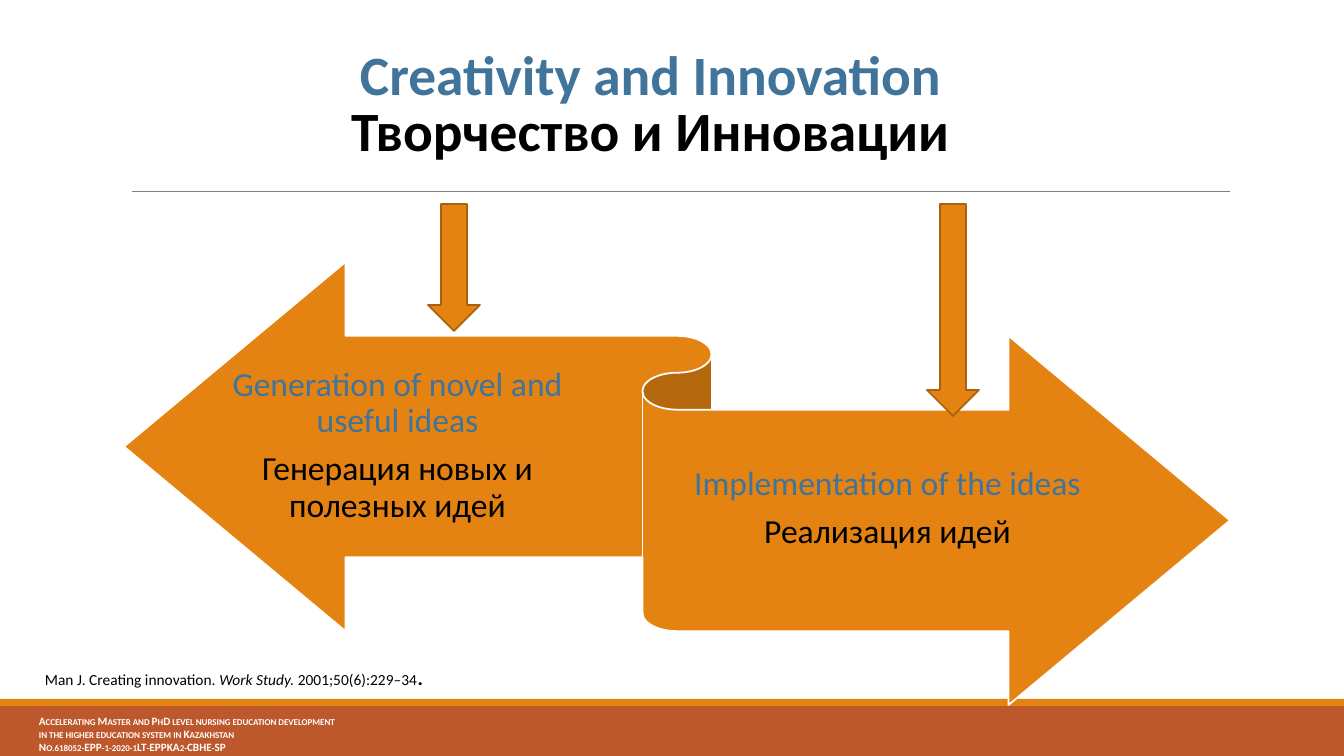
"""Build the Creativity and Innovation slide."""
from dataclasses import dataclass

from lxml import etree
from pptx import Presentation
from pptx import util as u
from pptx.dml.color import RGBColor
from pptx.enum import shapes, text
from pptx.oxml.ns import qn

EMU_PER_PX = 914400 / 100.8
ORANGE = RGBColor(0xE4, 0x83, 0x12)
DARK_ORANGE = RGBColor(0xA9, 0x61, 0x0D)
RUST = RGBColor(0xBD, 0x58, 0x2C)
GREY = RGBColor(0x80, 0x80, 0x80)
BLUE = RGBColor(0x40, 0x74, 0x9B)
BLACK = RGBColor(0, 0, 0)
WHITE = RGBColor(0xFF, 0xFF, 0xFF)
FONT = "Calibri"


@dataclass
class Box:
    left: int
    top: int
    width: int
    height: int

    def emu(self) -> list[u.Emu]:
        return [px(n) for n in (self.left, self.top, self.width, self.height)]


@dataclass
class Block:
    box: Box
    kind: shapes.MSO_SHAPE
    fill: RGBColor
    outline: RGBColor | None = None


@dataclass
class Idea:
    box: Box
    english: str
    russian: str


BANDS = [
    Block(Box(0, 706, 1344, 50), shapes.MSO_SHAPE.RECTANGLE, RUST),
    Block(Box(0, 699, 1344, 7), shapes.MSO_SHAPE.RECTANGLE, ORANGE),
]
RIBBON = Block(Box(124, 262, 1106, 443), shapes.MSO_SHAPE.LEFT_RIGHT_RIBBON, ORANGE, WHITE)
DOWN_ARROWS = [
    Block(Box(left, 204, 52, height), shapes.MSO_SHAPE.DOWN_ARROW, ORANGE, DARK_ORANGE)
    for left, height in ((428, 127), (927, 212))
]
IDEAS = [
    Idea(Box(210, 338, 375, 217), "Generation of novel and useful ideas",
         "Генерация новых и полезных идей"),
    Idea(Box(672, 401, 431, 217), "Implementation of the ideas", "Реализация идей"),
]
PROJECT = [
    "Accelerating Master and PhD level nursing education development",
    "in the higher education system in Kazakhstan",
    "No.618052-EPP-1-2020-1LT-EPPKA2-CBHE-SP",
]
CITATION = [
    ("Man J. Creating innovation. ", 11, False),
    ("Work Study. ", 11, True),
    ("2001;50(6):229–34", 11, False),
    (".", 18, False),
]


def px(length: int) -> u.Emu:
    """Turn px into EMU."""
    return u.Emu(round(length * EMU_PER_PX))


def add_block(slide, block: Block) -> None:
    """Draw a filled preset shape."""
    shape = slide.shapes.add_shape(block.kind, *block.box.emu())
    shape.shadow.inherit = False
    shape.fill.solid()
    shape.fill.fore_color.rgb = block.fill
    if block.outline is None:
        shape.line.fill.background()
    else:
        shape.line.color.rgb = block.outline
        shape.line.width = u.Pt(1.25)


def add_frame(slide, box: Box, anchor=text.MSO_ANCHOR.TOP, wrap: bool = True):
    """Add a text box and return its text frame."""
    frame = slide.shapes.add_textbox(*box.emu()).text_frame
    frame.word_wrap = wrap
    frame.vertical_anchor = anchor
    return frame


def add_paragraph(frame, wording: str, size: float, color: RGBColor, bold: bool = False):
    """Write the next paragraph of a frame."""
    first = frame.paragraphs[0]
    paragraph = frame.add_paragraph() if first.runs else first
    paragraph.text = wording
    font = paragraph.font
    font.name, font.size, font.bold = FONT, u.Pt(size), bold
    font.color.rgb = color
    return paragraph


def add_rule(slide) -> None:
    """Draw the thin line under the title."""
    rule = slide.shapes.add_connector(
        shapes.MSO_CONNECTOR.STRAIGHT, px(132), px(191), px(1230), px(191))
    rule.line.color.rgb = GREY
    rule.line.width = u.Pt(0.5)
    etree.SubElement(rule._element.spPr, qn("a:effectLst"))


def add_project(slide) -> None:
    """Write the project name in small capitals on the bottom band."""
    frame = add_frame(slide, Box(29, 709, 463, 47))
    frame.margin_bottom = 0
    for wording in PROJECT:
        paragraph = add_paragraph(frame, wording, 8, WHITE, bold=True)
        paragraph._p.pPr.find(qn("a:defRPr")).set("cap", "small")


def add_title(slide) -> None:
    """Write the two-language title."""
    frame = add_frame(slide, Box(29, 51, 1243, 117), text.MSO_ANCHOR.BOTTOM)
    title = add_paragraph(
        frame, "Creativity and Innovation\vТворчество и Инновации", 39.6, BLACK, bold=True)
    title.alignment = text.PP_ALIGN.CENTER
    title.line_spacing = 0.85
    title.runs[0].font.color.rgb = BLUE


def add_idea(slide, idea: Idea) -> None:
    """Write one side of the ribbon in both languages."""
    frame = add_frame(slide, idea.box, text.MSO_ANCHOR.MIDDLE)
    frame.margin_left = frame.margin_right = 0
    frame.margin_top, frame.margin_bottom = px(9), px(10)
    for wording, color in ((idea.english, BLUE), (idea.russian, BLACK)):
        paragraph = add_paragraph(frame, wording, 24, color)
        paragraph.alignment = text.PP_ALIGN.CENTER
        paragraph.line_spacing = 0.9
        paragraph.space_after = u.Pt(8.4)


def add_citation(slide) -> None:
    """Write the reference above the bottom band."""
    frame = add_frame(slide, Box(35, 655, 404, 40), wrap=False)
    paragraph = frame.paragraphs[0]
    paragraph.font.name = FONT
    paragraph.font.color.rgb = BLACK
    for wording, size, italic in CITATION:
        run = paragraph.add_run()
        run.text = wording
        run.font.size, run.font.italic = u.Pt(size), italic


def main() -> None:
    """Build and save the slide."""
    deck = Presentation()
    deck.slide_width, deck.slide_height = px(1344), px(756)
    slide = deck.slides.add_slide(deck.slide_layouts[6])
    for band in BANDS:
        add_block(slide, band)
    add_rule(slide)
    add_project(slide)
    add_title(slide)
    add_block(slide, RIBBON)
    for idea in IDEAS:
        add_idea(slide, idea)
    for arrow in DOWN_ARROWS:
        add_block(slide, arrow)
    add_citation(slide)
    deck.save("out.pptx")


if __name__ == "__main__":
    main()
